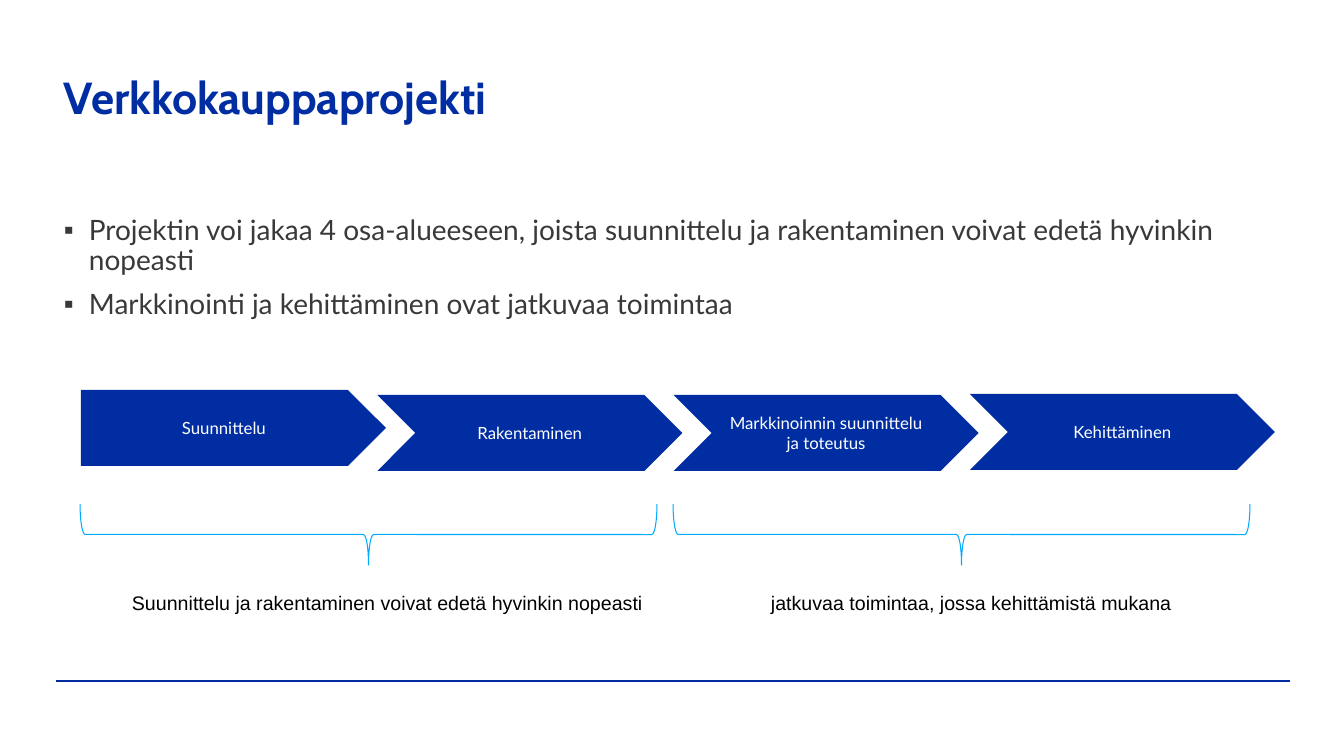
from lxml.etree import SubElement
from pptx import Presentation
from pptx.dml.color import RGBColor
from pptx.enum.shapes import MSO_CONNECTOR, MSO_SHAPE
from pptx.enum.text import MSO_ANCHOR, PP_ALIGN
from pptx.oxml.ns import qn
from pptx.util import Pt

PX = 914400 / 100.8
COLORS = {"navy": "002EA2", "sky": "00AAFF", "gray": "3A3838",
          "black": "000000", "white": "FFFFFF"}


def px(*values):
    return [round(v * PX) for v in values]


def rgb(name):
    return RGBColor.from_string(COLORS[name])


def add_bullet(p, char, indent):
    pPr = p._p.get_or_add_pPr()
    pPr.set("marL", str(indent))
    pPr.set("indent", str(-indent))
    SubElement(pPr, qn("a:buFont")).set("typeface", "Arial")
    SubElement(pPr, qn("a:buChar")).set("char", char)


def write(tf, *lines, font="Lato", size=12, color="black", bold=False, align=PP_ALIGN.LEFT,
          anchor=MSO_ANCHOR.TOP, wrap=True, spacing=None, gap=0, bullet=None):
    tf.word_wrap = wrap
    tf.vertical_anchor = anchor
    for i, line in enumerate(lines):
        p = tf.add_paragraph() if i else tf.paragraphs[0]
        p.alignment = align
        if spacing:
            p.line_spacing = spacing
        if i:
            p.space_before = Pt(gap)
        if bullet:
            add_bullet(p, bullet, px(25)[0])
        r = p.add_run()
        r.text = line
        r.font.name, r.font.size, r.font.bold = font, Pt(size), bold
        r.font.color.rgb = rgb(color)


def add_title(s, x, y, w, h):
    tf = s.shapes.add_textbox(*px(x, y, w, h)).text_frame
    write(tf, "Verkkokauppaprojekti", font="Cabin", size=32, color="navy", bold=True,
          anchor=MSO_ANCHOR.MIDDLE, spacing=0.9)


def add_body(s, x, y, w, h):
    tf = s.shapes.add_textbox(*px(x, y, w, h)).text_frame
    write(tf,
          "Projektin voi jakaa 4 osa-alueeseen, joista suunnittelu ja rakentaminen "
          "voivat edetä hyvinkin nopeasti",
          "Markkinointi ja kehittäminen ovat jatkuvaa toimintaa",
          size=20, color="gray", spacing=0.9, gap=10, bullet="▪")


def add_process(s, x, y, w, h):
    steps = [("Suunnittelu", 0), ("Rakentaminen", 5),
             ("Markkinoinnin suunnittelu ja toteutus", 5), ("Kehittäminen", 4)]
    step_w = 305
    pitch = (w - step_w) / (len(steps) - 1)
    for i, (label, drop) in enumerate(steps):
        kind = MSO_SHAPE.CHEVRON if i else MSO_SHAPE.PENTAGON
        sp = s.shapes.add_shape(kind, *px(x + i * pitch, y + drop, step_w, h))
        sp.shadow.inherit = False
        sp.fill.solid()
        sp.fill.fore_color.rgb = rgb("navy")
        sp.line.fill.background()
        tf = sp.text_frame
        tf.margin_left = tf.margin_right = tf.margin_top = tf.margin_bottom = px(10)[0]
        write(tf, label, color="white", align=PP_ALIGN.CENTER, anchor=MSO_ANCHOR.MIDDLE)


def add_brace(s, x, y, w, h):
    # Upright brace sharing its centre with the box, then turned to lie along it
    sp = s.shapes.add_shape(MSO_SHAPE.RIGHT_BRACE,
                            *px(x + (w - h) / 2, y + (h - w) / 2, h, w))
    sp.rotation = 90
    sp.shadow.inherit = False
    sp.fill.background()
    sp.line.color.rgb = rgb("sky")
    sp.line.width = Pt(0.75)


def add_caption(s, text, x, y, w, h):
    tf = s.shapes.add_textbox(*px(x, y, w, h)).text_frame
    write(tf, text, font="Arial", size=14, wrap=False)


def add_footer_line(s, x, y, w):
    line = s.shapes.add_connector(MSO_CONNECTOR.STRAIGHT, *px(x, y, x + w, y))
    line.line.color.rgb = rgb("navy")
    line.line.width = Pt(0.85)
    SubElement(line._element.spPr, qn("a:effectLst"))


def add_project_slide(prs):
    s = prs.slides.add_slide(prs.slide_layouts[6])
    add_footer_line(s, 56, 681, 1234)
    add_title(s, 54, 27, 1235, 146)
    add_body(s, 54, 211, 1235, 480)
    add_process(s, 81, 390, 1194, 76)
    # Phase groups under the arrows
    for x in (80, 673):
        add_brace(s, x, 504, 577, 61)
    add_caption(s, "Suunnittelu ja rakentaminen voivat edetä hyvinkin nopeasti", 122, 586, 533, 34)
    add_caption(s, "jatkuvaa toimintaa, jossa kehittämistä mukana", 761, 586, 423, 34)


def main():
    prs = Presentation()
    prs.slide_width, prs.slide_height = px(1344, 756)
    add_project_slide(prs)
    prs.save("out.pptx")


if __name__ == "__main__":
    main()
